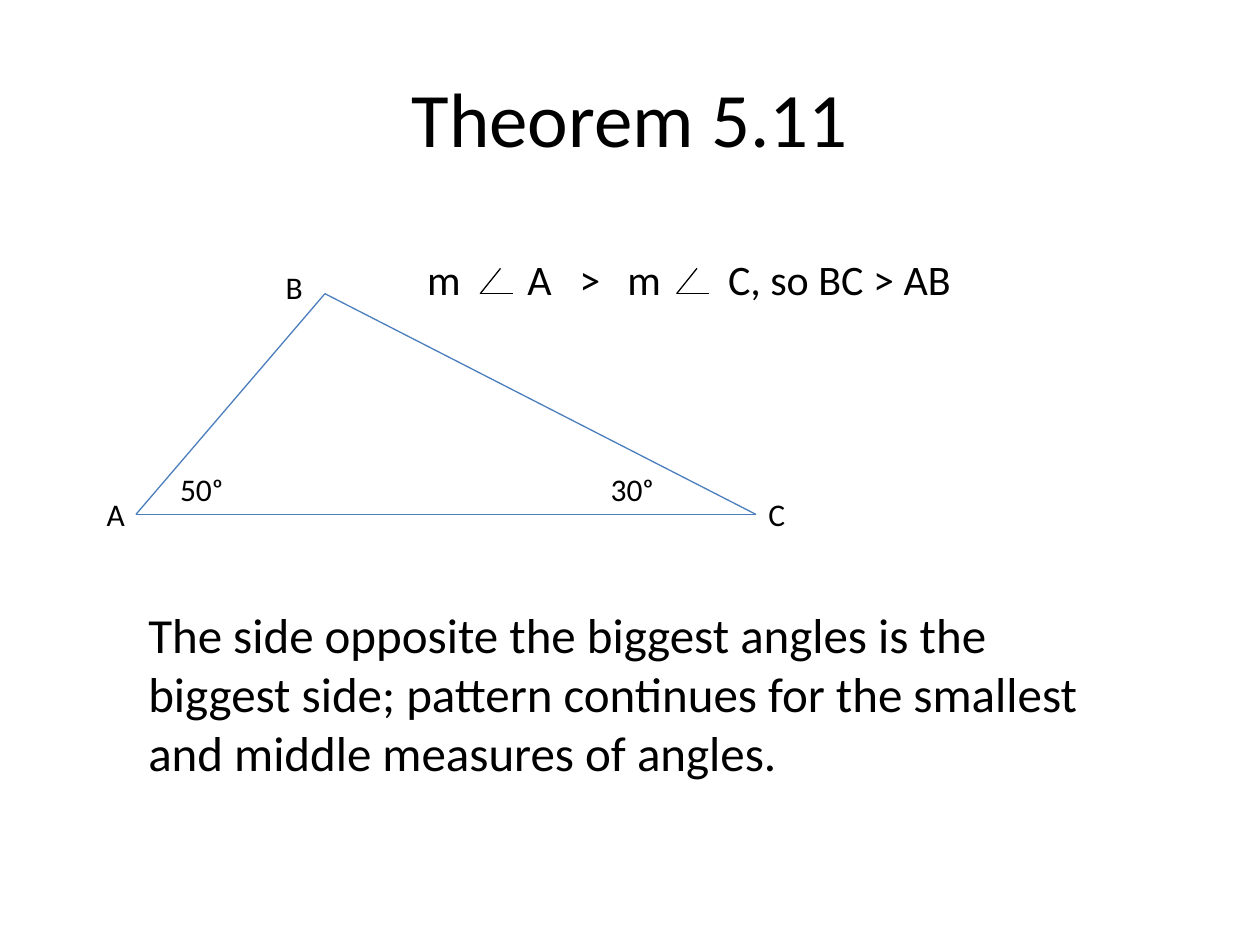
from lxml.etree import SubElement
from pptx import Presentation
from pptx.dml.color import RGBColor
from pptx.enum.shapes import MSO_CONNECTOR as Connector
from pptx.enum.text import MSO_ANCHOR as Anchor, PP_ALIGN as Align
from pptx.oxml.ns import qn
from pptx.util import Cm, Pt

COLORS = {"text": "000000", "side": "4B7EBC", "angle": "000000"}
FONT = "Calibri"


def style_text(frame, size, align=Align.LEFT):
    paragraph = frame.paragraphs[0]
    paragraph.alignment = align
    paragraph.font.name = FONT
    paragraph.font.size = Pt(size)
    paragraph.font.color.rgb = RGBColor.from_string(COLORS["text"])
    return paragraph


def add_text(slide, text, box, size):
    frame = slide.shapes.add_textbox(*map(Cm, box)).text_frame
    frame.word_wrap = True
    frame.text = text
    return style_text(frame, size)


def add_line(slide, start, end, color):
    line = slide.shapes.add_connector(Connector.STRAIGHT, *map(Cm, (*start, *end)))
    line.line.color.rgb = RGBColor.from_string(COLORS[color])
    line.line.width = Pt(0.75)
    SubElement(line._element.spPr, qn("a:effectLst"))


def add_title(slide, box):
    title = slide.shapes.title
    title.left, title.top, title.width, title.height = map(Cm, box)
    title.text_frame.text = "Theorem 5.11"
    title.text_frame.vertical_anchor = Anchor.MIDDLE
    style_text(title.text_frame, 44, Align.CENTER)


def add_triangle(slide, box):
    left, top, width, height = box
    a = (left, top + height)
    b = (left + 3.81, top)
    c = (left + width, top + height)
    for start, end in ((b, a), (a, c), (b, c)):
        add_line(slide, start, end, "side")

    # Vertex names and angle measures: offset from the box, then width
    labels = (
        ("A", -0.84, 3.94, 1.47),
        ("B", 2.77, -0.64, 1.9),
        ("C", width, 3.94, 1.27),
        ("50ᵒ", 0.64, 3.43, 1.7),
        ("30ᵒ", 9.32, 3.43, 1.9),
    )
    for text, dx, dy, label_width in labels:
        add_text(slide, text, (left + dx, top + dy, label_width, 1.03), 18)


def add_inequality(slide, box):
    left, top = box[:2]
    paragraph = add_text(slide, "m\tA\t>\tm\tC, so BC > AB", box, 24)

    # Tab stops leave room for the drawn angle signs
    stops = SubElement(paragraph._p.get_or_add_pPr(), qn("a:tabLst"))
    for position in (2.02, 3.07, 4.04, 6.07):
        SubElement(stops, qn("a:tab"), pos=str(Cm(position)), algn="l")

    for dx in (5.28, 1.32):
        x, y = left + dx, top + 0.94
        add_line(slide, (x, y), (x + 0.41, y - 0.51), "angle")
        add_line(slide, (x, y), (x + 0.66, y), "angle")


def add_statement(slide, box):
    add_text(slide, "The side opposite the biggest angles is the biggest side; "
             "pattern continues for the smallest and middle measures of angles.",
             box, 28)


def main():
    deck = Presentation()
    deck.slide_width, deck.slide_height = Cm(25.4), Cm(19.05)
    slide = deck.slides.add_slide(deck.slide_layouts[5])
    add_title(slide, (1.27, 0.76, 22.86, 3.18))
    add_triangle(slide, (2.74, 5.92, 12.5, 4.45))
    add_inequality(slide, (8.36, 4.98, 16.3, 1.27))
    add_statement(slide, (2.74, 12.07, 19.25, 4.62))
    deck.save("out.pptx")


if __name__ == "__main__":
    main()
